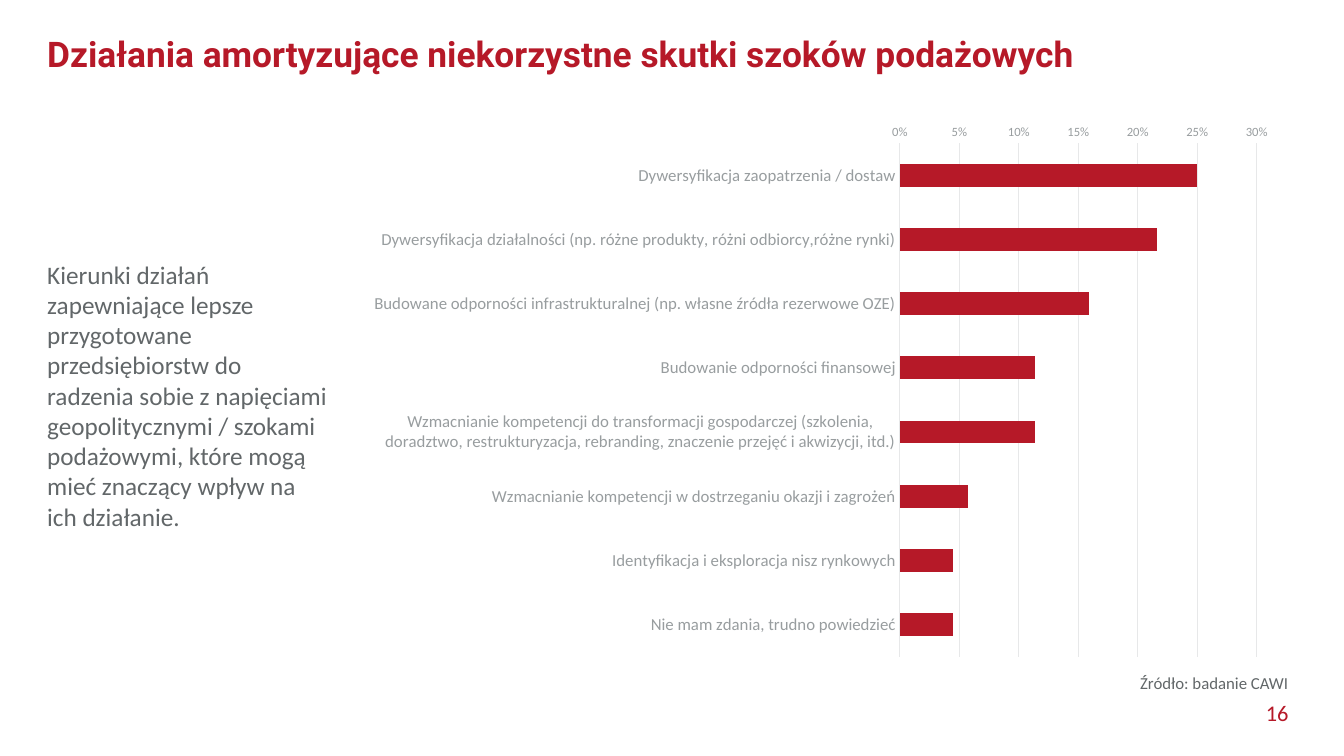
from pptx import Presentation
from pptx.chart.data import CategoryChartData
from pptx.dml.color import RGBColor
from pptx.enum.chart import XL_CHART_TYPE as ChartType, XL_TICK_MARK as Tick
from pptx.enum.text import MSO_ANCHOR as Anchor, PP_ALIGN as Align
from pptx.oxml import parse_xml
from pptx.oxml.ns import nsdecls, qn
from pptx.util import Inches, Pt

RED, DARK, GREY, GRID = "B61928", "626769", "989D9F", "E7E8E9"

ACTIONS = [
    ("Dywersyfikacja zaopatrzenia / dostaw", 0.25),
    ("Dywersyfikacja działalności (np. różne produkty, różni odbiorcy,różne rynki)", 0.216),
    ("Budowane odporności infrastrukturalnej (np. własne źródła rezerwowe OZE)", 0.159),
    ("Budowanie odporności finansowej", 0.114),
    ("Wzmacnianie kompetencji do transformacji gospodarczej (szkolenia, doradztwo, "
     "restrukturyzacja, rebranding, znaczenie przejęć i akwizycji, itd.)", 0.114),
    ("Wzmacnianie kompetencji w dostrzeganiu okazji i zagrożeń", 0.057),
    ("Identyfikacja i eksploracja nisz rynkowych", 0.045),
    ("Nie mam zdania, trudno powiedzieć", 0.045),
]


def rgb(value):
    return RGBColor.from_string(value)


def style_font(font, size, color, name="Calibri", bold=False):
    font.size, font.name, font.bold = Pt(size), name, bold
    font.color.rgb = rgb(color)


def add_text(s, box, text, size, color, name="Calibri", bold=False,
             align=Align.LEFT, anchor=Anchor.TOP, inset=True, spacing=None):
    tf = s.shapes.add_textbox(*map(Inches, box)).text_frame
    tf.word_wrap = True
    tf.vertical_anchor = anchor
    if not inset:
        tf.margin_left = tf.margin_right = tf.margin_top = tf.margin_bottom = 0
    p = tf.paragraphs[0]
    p.alignment = align
    if spacing:
        p.line_spacing = spacing
    r = p.add_run()
    r.text = text
    style_font(r.font, size, color, name, bold)


def place_plot(chart, x, y, w, h):
    """Fix the inner plot area, as fractions of the chart."""
    area = chart.element.find(".//" + qn("c:plotArea"))
    for old in area.findall(qn("c:layout")):
        area.remove(old)
    area.insert(0, parse_xml(
        f'<c:layout {nsdecls("c")}><c:manualLayout><c:layoutTarget val="inner"/>'
        '<c:xMode val="edge"/><c:yMode val="edge"/>'
        f'<c:x val="{x}"/><c:y val="{y}"/><c:w val="{w}"/><c:h val="{h}"/>'
        '</c:manualLayout></c:layout>'))


def add_actions_chart(s, box):
    data = CategoryChartData(number_format="0%")
    data.categories = [label for label, _ in ACTIONS]
    data.add_series("Series 1", [share for _, share in ACTIONS])
    chart = s.shapes.add_chart(ChartType.BAR_CLUSTERED, *map(Inches, box), data).chart
    chart.has_legend = chart.has_title = False
    style_font(chart.font, 10, DARK)
    place_plot(chart, 0.584, 0.053, 0.383, 0.928)

    # Bars
    plot = chart.plots[0]
    plot.gap_width = 182
    plot.vary_by_categories = False
    fill = plot.series[0].format.fill
    fill.solid()
    fill.fore_color.rgb = rgb(RED)

    # Axes
    cat, val = chart.category_axis, chart.value_axis
    for axis, size in ((cat, 12), (val, 9)):
        axis.major_tick_mark = axis.minor_tick_mark = Tick.NONE
        style_font(axis.tick_labels.font, size, GREY)
    cat.reverse_order = True
    val.minimum_scale, val.maximum_scale, val.major_unit = 0, 0.3, 0.05
    val.tick_labels.number_format = "0%"
    val.tick_labels.number_format_is_linked = False
    val.format.line.fill.background()
    val.has_major_gridlines = True
    for line in (cat.format.line, val.major_gridlines.format.line):
        line.color.rgb = rgb(GRID)
        line.width = Pt(0.75)


def add_footer(s, left, top, width):
    add_text(s, (left + 1.43, top, 1.76, 0.3), "Źródło: badanie CAWI", 12, DARK)
    add_text(s, (left, top + 0.18, width, 0.4), "16", 16, RED,
             align=Align.RIGHT, anchor=Anchor.BOTTOM, inset=False)


def main():
    prs = Presentation()
    prs.slide_width, prs.slide_height = Inches(13.33), Inches(7.5)
    s = prs.slides.add_slide(prs.slide_layouts[6])

    # Title and lead text
    add_text(s, (0.37, 0.32, 10.95, 0.48),
             "Działania amortyzujące niekorzystne skutki szoków podażowych",
             25.2, RED, "Roboto", True, anchor=Anchor.MIDDLE, spacing=0.9)
    add_text(s, (0.37, 2.52, 3, 2.83),
             "Kierunki działań zapewniające lepsze przygotowane przedsiębiorstw do "
             "radzenia sobie z napięciami geopolitycznymi / szokami podażowymi, "
             "które mogą mieć znaczący wpływ na ich działanie.", 18, DARK)

    # Chart and footer
    add_actions_chart(s, (3.53, 1.13, 9.24, 5.49))
    add_footer(s, 9.78, 6.62, 3)
    prs.save("out.pptx")


if __name__ == "__main__":
    main()
